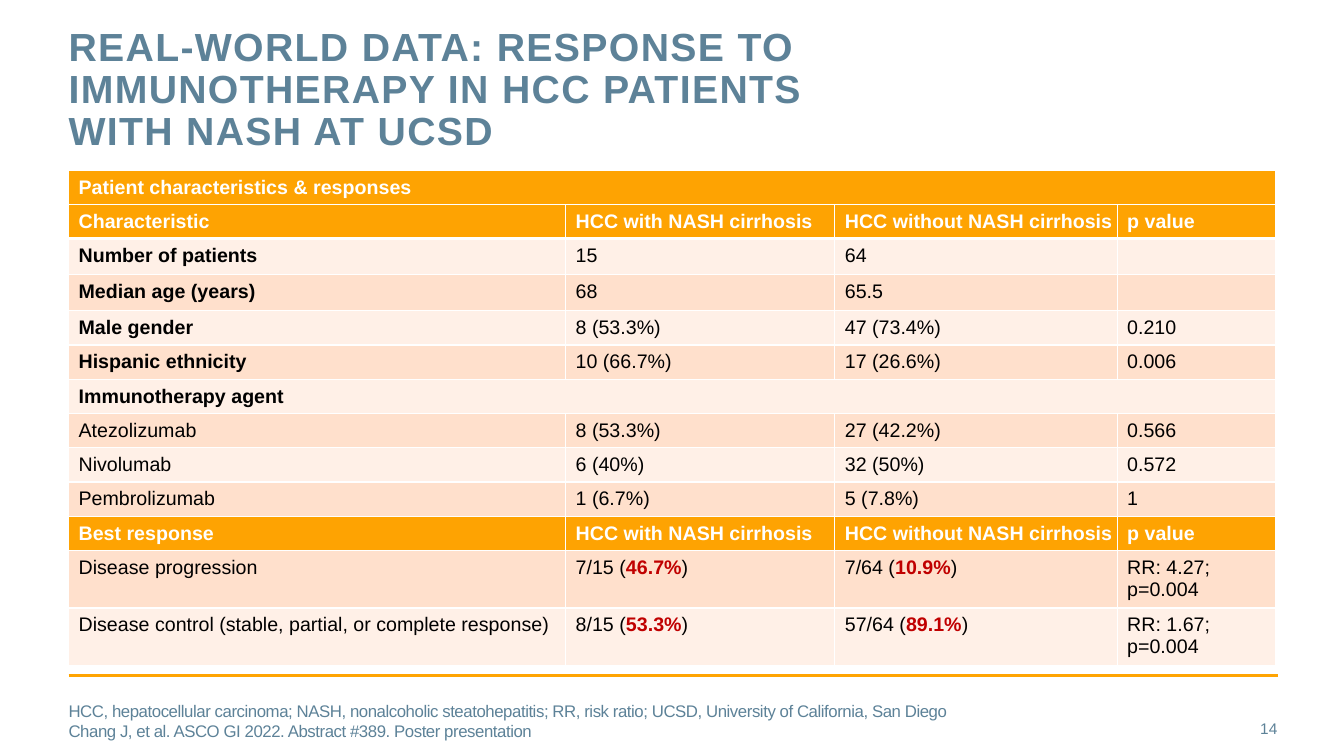
from lxml.etree import SubElement
from pptx import Presentation
from pptx.dml.color import RGBColor
from pptx.enum.shapes import MSO_CONNECTOR
from pptx.enum.text import MSO_ANCHOR, MSO_AUTO_SIZE, PP_ALIGN
from pptx.oxml.ns import qn
from pptx.util import Inches, Pt

COLORS = {"slate": "5D8298", "orange": "FEA302", "rule": "FFA402", "light": "FFF0E7",
          "peach": "FFE0CC", "white": "FFFFFF", "black": "000000", "red": "C00000"}

LEFT = 0.68
GROUPS = ["HCC with NASH cirrhosis", "HCC without NASH cirrhosis", "p value"]
# Asterisks enclose highlighted percentages
ROWS = [
    ["Patient characteristics & responses"],
    ["Characteristic", *GROUPS],
    ["Number of patients", "15", "64", ""],
    ["Median age (years)", "68", "65.5", ""],
    ["Male gender", "8 (53.3%)", "47 (73.4%)", "0.210"],
    ["Hispanic ethnicity", "10 (66.7%)", "17 (26.6%)", "0.006"],
    ["Immunotherapy agent"],
    ["Atezolizumab", "8 (53.3%)", "27 (42.2%)", "0.566"],
    ["Nivolumab", "6 (40%)", "32 (50%)", "0.572"],
    ["Pembrolizumab", "1 (6.7%)", "5 (7.8%)", "1"],
    ["Best response", *GROUPS],
    ["Disease progression", "7/15 (*46.7%*)", "7/64 (*10.9%*)", "RR: 4.27; p=0.004"],
    ["Disease control (stable, partial, or complete response)",
     "8/15 (*53.3%*)", "57/64 (*89.1%*)", "RR: 1.67; p=0.004"],
]
COL_WIDTHS = [4.93, 2.67, 2.8, 1.57]
HEADER_ROWS = (0, 1, 10)
BOLD_LABEL_ROWS = range(2, 7)
ROW_H, TALL_ROW_H = 0.34, 0.57
TALL_ROWS = (11, 12)


def rgb(name):
    return RGBColor.from_string(COLORS[name])


def set_attrs(obj, values):
    for name, value in values.items():
        setattr(obj, name, value)


def add_run(p, text, size, color, bold=False, spacing=None):
    r = p.add_run()
    r.text = text
    set_attrs(r.font, {"name": "Arial", "size": Pt(size), "bold": bold})
    r.font.color.rgb = rgb(color)
    if spacing is not None:
        r.font._element.set("spc", str(round(spacing * 100)))


def place_text(sp, box, lines, anchor, fmt, align=PP_ALIGN.LEFT, line_spacing=None):
    """Position a text shape and fill it with one paragraph per line."""
    set_attrs(sp, dict(zip(("left", "top", "width", "height"), map(Inches, box))))
    tf = sp.text_frame
    set_attrs(tf, {"word_wrap": True, "auto_size": MSO_AUTO_SIZE.NONE,
                   "vertical_anchor": anchor, "margin_left": 0, "margin_right": 0,
                   "margin_top": 0, "margin_bottom": 0})
    for i, line in enumerate(lines):
        p = tf.paragraphs[0] if i == 0 else tf.add_paragraph()
        pPr = p._p.get_or_add_pPr()
        pPr.set("marL", "0")
        pPr.set("indent", "0")
        SubElement(pPr, qn("a:buNone"))
        set_attrs(p, {"alignment": align, "space_before": Pt(0),
                      "line_spacing": line_spacing})
        add_run(p, line, **fmt)


def add_rule(slide, y, x1, x2):
    ln = slide.shapes.add_connector(MSO_CONNECTOR.STRAIGHT, Inches(x1), Inches(y),
                                    Inches(x2), Inches(y))
    ln.line.color.rgb = rgb("rule")
    ln.line.width = Pt(2)
    SubElement(ln._element.spPr, qn("a:effectLst"))


def set_borders(cell, widths):
    tcPr = cell._tc.get_or_add_tcPr()
    for side, width in widths.items():
        ln = SubElement(tcPr, qn(f"a:ln{side}"), w=str(Pt(width)))
        fill = SubElement(ln, qn("a:solidFill"))
        SubElement(fill, qn("a:srgbClr"), val=COLORS["white"])


def format_cell(cell, row, col, text):
    header = row in HEADER_ROWS
    set_attrs(cell, {"margin_left": Inches(0.1), "margin_top": Inches(0.06),
                     "margin_right": Inches(0.02 if header and col == 2 else 0.1),
                     "margin_bottom": Inches(0.06)})
    # The line under the column headings is heavier
    set_borders(cell, {"L": 1, "R": 1, "T": 2.25 if row == 2 else 1,
                       "B": 2.25 if row == 1 else 1})
    cell.fill.solid()
    cell.fill.fore_color.rgb = rgb("orange" if header else ("light", "peach")[row % 2])

    p = cell.text_frame.paragraphs[0]
    bold = header or (col == 0 and row in BOLD_LABEL_ROWS)
    for i, part in enumerate(text.split("*")):
        if part:
            marked = i % 2 == 1
            color = "red" if marked else "white" if header else "black"
            add_run(p, part, 14, color, bold or marked)
    if not text:
        SubElement(p._p, qn("a:endParaRPr"), sz="1400")


def add_data_table(slide):
    heights = [TALL_ROW_H if i in TALL_ROWS else ROW_H for i in range(len(ROWS))]
    frame = slide.shapes.add_table(len(ROWS), len(COL_WIDTHS), Inches(LEFT), Inches(1.69),
                                   Inches(sum(COL_WIDTHS)), Inches(sum(heights)))
    table = frame.table
    set_attrs(table, {"first_row": False, "horz_banding": False})
    for column, width in zip(table.columns, COL_WIDTHS):
        column.width = Inches(width)
    last = len(COL_WIDTHS) - 1
    for i, texts in enumerate(ROWS):
        table.rows[i].height = Inches(heights[i])
        if len(texts) == 1:
            table.cell(i, 0).merge(table.cell(i, last))
        for j in range(last + 1):
            format_cell(table.cell(i, j), i, j, texts[j] if j < len(texts) else "")


def main():
    prs = Presentation()
    prs.slide_width, prs.slide_height = Inches(13.33), Inches(7.5)
    slide = prs.slides.add_slide(prs.slide_layouts[1])

    # Title
    place_text(slide.shapes.title, (LEFT, 0.27, 8.27, 0.88),
               ["REAL-WORLD DATA: RESPONSE TO IMMUNOTHERAPY IN HCC PATIENTS "
                "WITH NASH AT UCSD"], MSO_ANCHOR.TOP,
               {"size": 28, "color": "slate", "bold": True, "spacing": 1},
               line_spacing=Pt(30))

    # Abbreviations and reference
    place_text(slide.placeholders[1], (LEFT, 6.95, 8.88, 0.4),
               ["HCC, hepatocellular carcinoma; NASH, nonalcoholic steatohepatitis; "
                "RR, risk ratio; UCSD, University of California, San Diego",
                "Chang J, et al. ASCO GI 2022. Abstract #389. Poster presentation"],
               MSO_ANCHOR.MIDDLE, {"size": 12, "color": "slate", "spacing": -0.3})

    # Results table and rule below it
    add_data_table(slide)
    add_rule(slide, 6.7, LEFT, 12.68)

    # Slide number
    number = slide.shapes.add_textbox(0, 0, 0, 0)
    place_text(number, (11.81, 7.03, 0.86, 0.4), ["14"], MSO_ANCHOR.MIDDLE,
               {"size": 11, "color": "slate"}, PP_ALIGN.RIGHT)

    prs.save("out.pptx")


if __name__ == "__main__":
    main()
